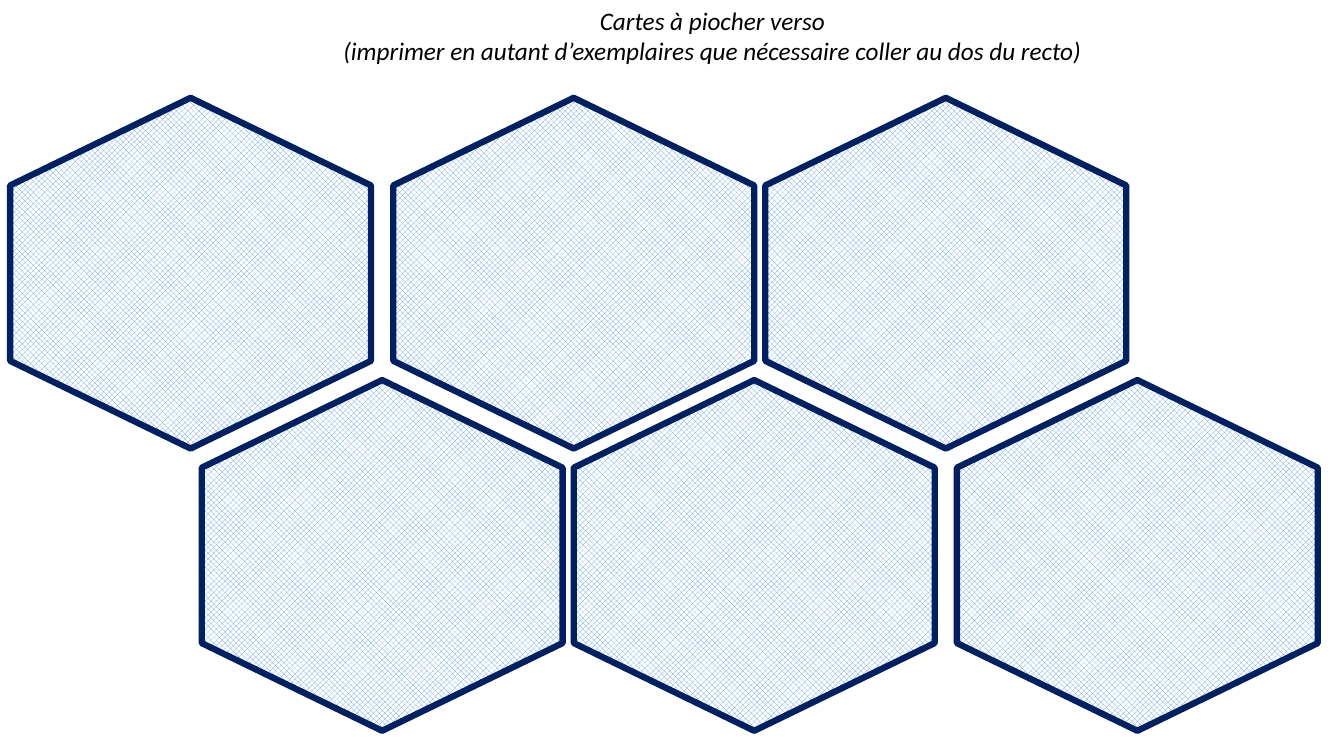
from dataclasses import dataclass

from pptx import Presentation
from pptx.dml.color import RGBColor
from pptx.enum.dml import MSO_PATTERN
from pptx.enum.shapes import MSO_SHAPE
from pptx.enum.text import MSO_AUTO_SIZE, PP_ALIGN
from pptx.slide import Slide
from pptx.util import Inches, Pt

COLORS = {"border": "002060", "hatch": "5B9BD5", "paper": "FFFFFF", "text": "000000"}
CARD_WIDTH, CARD_HEIGHT = 3.48, 3.58  # before the quarter turn


@dataclass(frozen=True)
class CardRow:
    top: float
    lefts: tuple[float, ...]


CARD_ROWS = (
    CardRow(top=0.92, lefts=(0.15, 3.95, 7.64)),
    CardRow(top=3.72, lefts=(2.05, 5.74, 9.54)),
)
HEADING = (
    "Cartes à piocher verso ",
    "(imprimer en autant d’exemplaires que nécessaire coller au dos du recto) ",
)


def color(name: str) -> RGBColor:
    return RGBColor.from_string(COLORS[name])


def add_card(slide: Slide, left: float, top: float) -> None:
    shape = slide.shapes.add_shape(
        MSO_SHAPE.HEXAGON, Inches(left), Inches(top), Inches(CARD_WIDTH), Inches(CARD_HEIGHT)
    )
    shape.rotation = 90
    shape.shadow.inherit = False
    shape.fill.patterned()
    shape.fill.pattern = MSO_PATTERN.SOLID_DIAMOND
    shape.fill.fore_color.rgb = color("hatch")
    shape.fill.back_color.rgb = color("paper")
    shape.line.color.rgb = color("border")
    shape.line.width = Pt(4.5)


def add_text(
    slide: Slide,
    lines: tuple[str, ...],
    *,
    left: float,
    top: float,
    width: float,
    height: float,
    size: float = 18,
    font: str = "Calibri",
    italic: bool = False,
    align: PP_ALIGN = PP_ALIGN.CENTER,
) -> None:
    box = slide.shapes.add_textbox(Inches(left), Inches(top), Inches(width), Inches(height))
    frame = box.text_frame
    frame.word_wrap = True
    frame.auto_size = MSO_AUTO_SIZE.SHAPE_TO_FIT_TEXT
    frame.text = "\n".join(lines)
    for paragraph in frame.paragraphs:
        paragraph.alignment = align
        for run in paragraph.runs:
            run.font.name = font
            run.font.size = Pt(size)
            run.font.italic = italic
            run.font.color.rgb = color("text")


def main() -> None:
    presentation = Presentation()
    presentation.slide_width = Inches(13.33)
    presentation.slide_height = Inches(7.5)
    slide = presentation.slides.add_slide(presentation.slide_layouts[6])

    # Two staggered rows of card backs
    for row in CARD_ROWS:
        for left in row.lefts:
            add_card(slide, left, row.top)

    # Heading
    add_text(slide, HEADING, left=2.36, top=0, width=9.47, height=0.71, italic=True)

    presentation.save("out.pptx")


if __name__ == "__main__":
    main()
